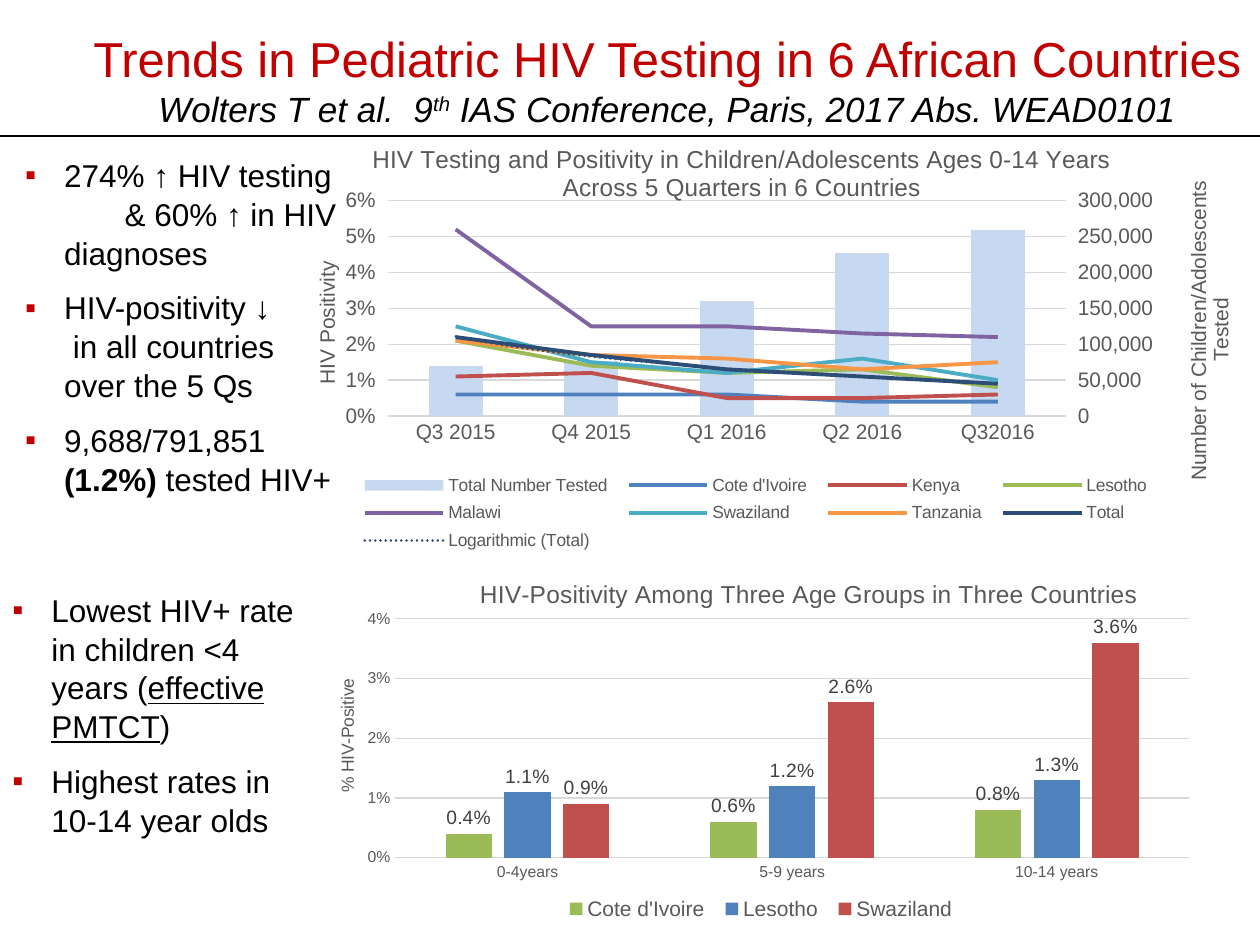
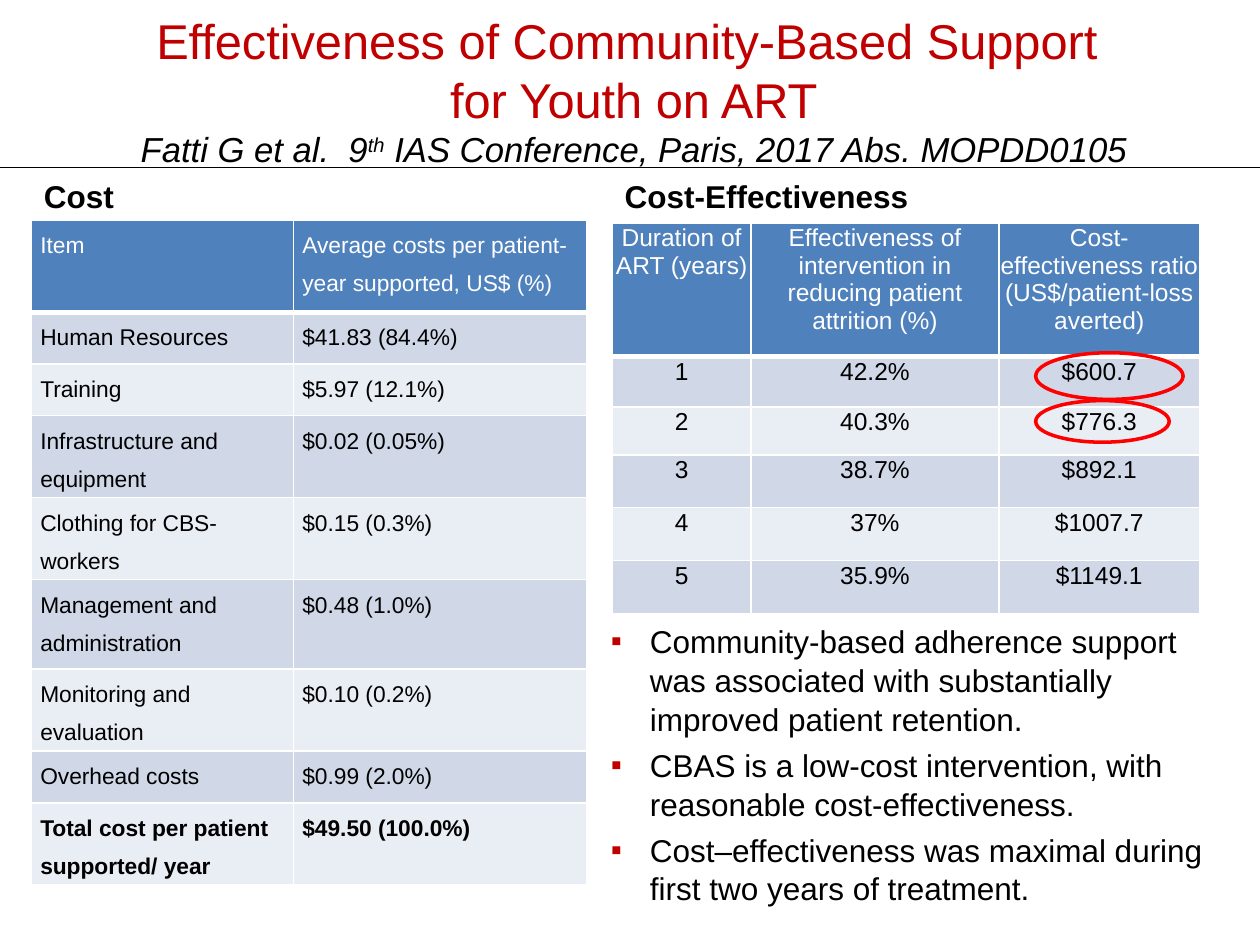
from copy import deepcopy
from dataclasses import dataclass

from pptx import Presentation
from pptx import util as u
from pptx.chart import axis as axes
from pptx.chart.data import CategoryChartData
from pptx.dml.color import RGBColor
from pptx.enum import chart as ch, shapes, text
from pptx.oxml import parse_xml
from pptx.oxml.ns import nsdecls, qn

CRIMSON = RGBColor(0xC0, 0x00, 0x00)
BLACK = RGBColor(0x00, 0x00, 0x00)
WHITE = RGBColor(0xFF, 0xFF, 0xFF)
RED = RGBColor(0xFF, 0x00, 0x00)
GREY = RGBColor(0x59, 0x59, 0x59)
DARK_GREY = RGBColor(0x40, 0x40, 0x40)
GRID = RGBColor(0xD9, 0xD9, 0xD9)
PALE_BLUE = RGBColor(0xC6, 0xD9, 0xF1)
BLUE = RGBColor(0x4F, 0x81, 0xBD)
BRICK = RGBColor(0xC0, 0x50, 0x4D)
GREEN = RGBColor(0x9B, 0xBB, 0x59)
PURPLE = RGBColor(0x80, 0x64, 0xA2)
TEAL = RGBColor(0x4B, 0xAC, 0xC6)
ORANGE = RGBColor(0xF7, 0x96, 0x46)
NAVY = RGBColor(0x2C, 0x4D, 0x75)
BANDS = (RGBColor(0xE9, 0xED, 0xF4), RGBColor(0xD0, 0xD8, 0xE8))

FONT = "Arial"
CELL = u.Inches(0.1)
COLUMNS, ROWS = 100, 75
HANG = 0.31


@dataclass
class Box:
    """An area in grid cells."""
    left: float
    top: float
    width: float
    height: float

    def emu(self):
        """Return the area in slide units."""
        return [int(n * CELL) for n in (self.left, self.top, self.width, self.height)]

    def inner(self, left, top, width, height):
        """Return an area placed from this one's corner."""
        return Box(self.left + left, self.top + top, width, height)


def style(font, size, color=BLACK, **values):
    """Format a font."""
    for key, value in {"name": FONT, "size": u.Pt(size), "bold": False, **values}.items():
        setattr(font, key, value)
    font.color.rgb = color


def add_runs(paragraph, runs, size, color=BLACK):
    """Write (text, format) runs, turning newlines into line breaks."""
    for words, values in runs:
        values = {"size": size, "color": color, **values}
        raised = values.pop("raised", False)
        for number, line in enumerate(words.split("\n")):
            if number:
                paragraph.add_line_break()
            if line:
                run = paragraph.add_run()
                run.text = line
                style(run.font, **values)
                if raised:
                    run.font._element.set("baseline", "30000")


def heading(slide, box, title, authors, abstract, rule_row, sizes=(28, 20)):
    """Fill the title with its citation and draw the rule below."""
    holder = slide.shapes.title
    holder.left, holder.top, holder.width, holder.height = box.emu()
    frame = holder.text_frame
    frame.auto_size = text.MSO_AUTO_SIZE.NONE
    frame.vertical_anchor = text.MSO_ANCHOR.MIDDLE
    paragraph = frame.paragraphs[0]
    paragraph.alignment = text.PP_ALIGN.CENTER
    cite = {"size": sizes[1], "color": BLACK, "italic": True}
    add_runs(paragraph, [(title + "\n", {}), (authors + "  9", cite), ("th", {**cite, "raised": True}),
                         (" IAS Conference, Paris, 2017 Abs. " + abstract, cite)], sizes[0], CRIMSON)
    y = int(rule_row * CELL)
    rule = slide.shapes.add_connector(shapes.MSO_CONNECTOR.STRAIGHT, 0, y, COLUMNS * CELL, y)
    rule.line.color.rgb = BLACK
    rule.line.width = u.Pt(0.75)
    rule._element.spPr.append(parse_xml(f"<a:effectLst {nsdecls('a')}/>"))


def bullets(slide, box, points, before, after=0):
    """Write points, each a list of (indent, runs) lines with a bullet on the first."""
    frame = slide.shapes.add_textbox(*box.emu()).text_frame
    frame.word_wrap = True
    frame.auto_size = text.MSO_AUTO_SIZE.SHAPE_TO_FIT_TEXT
    lines = [(n == 0, n == len(point) - 1, *line) for point in points for n, line in enumerate(point)]
    for number, (first, last, indent, runs) in enumerate(lines):
        paragraph = frame.add_paragraph() if number else frame.paragraphs[0]
        paragraph.line_spacing = 1.03
        paragraph.space_before = u.Pt(before if first else 0)
        paragraph.space_after = u.Pt(after if last else 0)
        properties = paragraph._p.get_or_add_pPr()
        properties.set("marL", str(u.Inches(indent)))
        properties.set("indent", str(-u.Inches(HANG) if first else 0))
        if first:
            for mark in (f'<a:buClr {nsdecls("a")}><a:srgbClr val="{CRIMSON}"/></a:buClr>',
                         f'<a:buFont {nsdecls("a")} typeface="{FONT}"/>',
                         f'<a:buChar {nsdecls("a")} char="▪"/>'):
                properties.append(parse_xml(mark))
        add_runs(paragraph, runs, 18)


def set_layout(parent, index, target="", **shares):
    """Fix the place of a chart part in shares of the chart."""
    old = parent.find(qn("c:layout"))
    if old is not None:
        parent.remove(old)
    modes = '<c:xMode val="edge"/><c:yMode val="edge"/>'
    values = "".join(f'<c:{key} val="{value}"/>' for key, value in shares.items())
    parent.insert(index, parse_xml(f"<c:layout {nsdecls('c')}><c:manualLayout>{target}{modes}{values}"
                                   "</c:manualLayout></c:layout>"))


def chart_title(title, words, size, x, y, upright=True):
    """Write and place a chart or axis title."""
    frame = title.text_frame
    frame.text = words
    for paragraph in frame.paragraphs:
        for run in paragraph.runs:
            style(run.font, size, GREY)
    if not upright:
        body = next(title._element.iter(qn("a:bodyPr")))
        body.set("rot", "-5400000")
        body.set("vert", "horz")
    set_layout(title._element, 1, x=x, y=y)


def value_axis(axis, top, step, number_format, size, title):
    """Format a value axis with its gridlines and title."""
    for key, value in {"minimum_scale": 0, "maximum_scale": top, "major_unit": step,
                       "has_major_gridlines": True,
                       "major_tick_mark": ch.XL_TICK_MARK.NONE}.items():
        setattr(axis, key, value)
    axis.tick_labels.number_format = number_format
    axis.tick_labels.number_format_is_linked = False
    style(axis.tick_labels.font, size, GREY)
    axis.format.line.fill.background()
    thin_grey(axis.major_gridlines.format.line)
    chart_title(axis.axis_title, *title, upright=False)


def thin_grey(line):
    """Draw a line as a thin grey rule."""
    line.color.rgb = GRID
    line.width = u.Pt(0.75)


def add_column_chart(slide, box, kind, categories, series, title, plot, key, gap, overlap, sizes):
    """Add a column chart with title, legend and category axis."""
    data = CategoryChartData()
    data.categories = categories
    for name, _, values in series:
        data.add_series(name, values, "#,##0" if max(values) > 1 else "0.0%")
    chart = slide.shapes.add_chart(kind, *box.emu(), data).chart
    label_size, legend_size = sizes
    style(chart.font, label_size)
    chart_title(chart.chart_title, *title)
    chart.has_legend = True
    chart.legend.position = ch.XL_LEGEND_POSITION.BOTTOM
    chart.legend.include_in_layout = False
    style(chart.legend.font, legend_size, GREY)
    set_layout(chart.legend._element, 1, **dict(zip("xywh", key)))
    columns = chart.plots[0]
    columns.gap_width, columns.overlap, columns.vary_by_categories = gap, overlap, False
    for column, (_, color, _) in zip(columns.series, series):
        column.format.fill.solid()
        column.format.fill.fore_color.rgb = color
    axis = chart.category_axis
    axis.major_tick_mark = ch.XL_TICK_MARK.NONE
    style(axis.tick_labels.font, label_size, GREY)
    thin_grey(axis.format.line)
    set_layout(chart._chartSpace.chart.plotArea, 0, '<c:layoutTarget val="inner"/>', **dict(zip("xywh", plot)))
    return chart


def lines_on_second_axis(chart, colors):
    """Move all series but the first to lines; return the column and line value axes."""
    area = chart._chartSpace.chart.plotArea
    bars = area.find(qn("c:barChart"))
    lines = parse_xml(f'<c:lineChart {nsdecls("c")}><c:grouping val="standard"/><c:varyColors val="0"/>'
                      '<c:marker val="1"/><c:axId val="501"/><c:axId val="502"/></c:lineChart>')
    for member in bars.findall(qn("c:ser"))[1:]:
        for tag in ("c:invertIfNegative", "c:spPr"):
            for part in member.findall(qn(tag)):
                member.remove(part)
        lines.find(qn("c:marker")).addprevious(member)
    bars.addnext(lines)
    counts = area.find(qn("c:valAx"))
    category, shares = deepcopy(area.find(qn("c:catAx"))), deepcopy(counts)
    for element, own, other in ((category, "501", "502"), (shares, "502", "501")):
        element.find(qn("c:axId")).set("val", own)
        element.find(qn("c:crossAx")).set("val", other)
    counts.addnext(shares)
    shares.addnext(category)
    counts.find(qn("c:axPos")).set("val", "r")
    chart.category_axis.crosses = ch.XL_AXIS_CROSSES.MAXIMUM
    hidden = axes.CategoryAxis(category)
    hidden.visible = False
    hidden.crosses = ch.XL_AXIS_CROSSES.MINIMUM
    for line, color in zip(chart.plots[1].series, colors):
        line.smooth = False
        line.marker.style = ch.XL_MARKER_STYLE.NONE
        line.format.line.color.rgb = color
        line.format.line.width = u.Pt(2.25)
    return axes.ValueAxis(counts), axes.ValueAxis(shares)


def add_log_trend(series, color):
    """Add a dotted logarithmic trend line."""
    series._element.find(qn("c:cat")).addprevious(parse_xml(
        f'<c:trendline {nsdecls("c", "a")}><c:spPr><a:ln w="{u.Pt(1.5)}" cap="rnd"><a:solidFill>'
        f'<a:srgbClr val="{color}"/></a:solidFill><a:prstDash val="sysDot"/></a:ln></c:spPr>'
        '<c:trendlineType val="log"/><c:dispRSqr val="0"/><c:dispEq val="0"/></c:trendline>'))


def testing_chart(slide, box):
    """Show tests as columns and positivity as lines."""
    series = [("Total Number Tested", PALE_BLUE, (69000, 77000, 160000, 227000, 259000)),
              ("Cote d'Ivoire", BLUE, (0.006, 0.006, 0.006, 0.004, 0.004)),
              ("Kenya", BRICK, (0.011, 0.012, 0.005, 0.005, 0.006)),
              ("Lesotho", GREEN, (0.021, 0.014, 0.012, 0.013, 0.008)),
              ("Malawi", PURPLE, (0.052, 0.025, 0.025, 0.023, 0.022)),
              ("Swaziland", TEAL, (0.025, 0.015, 0.012, 0.016, 0.01)),
              ("Tanzania", ORANGE, (0.021, 0.017, 0.016, 0.013, 0.015)),
              ("Total", NAVY, (0.022, 0.017, 0.013, 0.011, 0.009))]
    title = ("HIV Testing and Positivity in Children/Adolescents Ages 0-14 Years\n"
             "Across 5 Quarters in 6 Countries", 14, 0.11, 0.01)
    chart = add_column_chart(slide, box, ch.XL_CHART_TYPE.COLUMN_STACKED,
                             ("Q3 2015", "Q4 2015", "Q1 2016", "Q2 2016", "Q32016"), series, title,
                             (0.13, 0.15, 0.7, 0.5), (0.09, 0.77, 0.84, 0.21), 150, 100, (12, 10))
    tested, positivity = lines_on_second_axis(chart, [color for _, color, _ in series[1:]])
    value_axis(positivity, 0.06, 0.01, "0%", 12, ("HIV Positivity", 12, 0.05, 0.28))
    positivity.tick_label_position = ch.XL_TICK_LABEL_POSITION.LOW
    value_axis(tested, 300000, 50000, "#,##0", 12,
               ("Number of Children/Adolescents Tested", 12, 0.95, 0.09))
    tested.tick_label_position = ch.XL_TICK_LABEL_POSITION.HIGH
    add_log_trend(chart.plots[1].series[-1], NAVY)


def age_chart(slide, box):
    """Compare positivity by age group."""
    series = [("Cote d'Ivoire", GREEN, (0.004, 0.006, 0.008)),
              ("Lesotho", BLUE, (0.011, 0.012, 0.013)),
              ("Swaziland", BRICK, (0.009, 0.026, 0.036))]
    title = ("HIV-Positivity Among Three Age Groups in Three Countries", 14, 0.18, 0.02)
    chart = add_column_chart(slide, box, ch.XL_CHART_TYPE.COLUMN_CLUSTERED,
                             ("0-4years", "5-9 years", "10-14 years"), series, title,
                             (0.09, 0.14, 0.89, 0.63), (0.27, 0.86, 0.46, 0.09), 219, -27, (9, 12))
    value_axis(chart.value_axis, 0.04, 0.01, "0%", 9, ("% HIV-Positive", 10, 0.02, 0.29))
    for column in chart.plots[0].series:
        labels = column.data_labels
        for key, value in {"show_value": True, "number_format": "0.0%", "number_format_is_linked": False,
                           "position": ch.XL_LABEL_POSITION.OUTSIDE_END}.items():
            setattr(labels, key, value)
        style(labels.font, 11, DARK_GREY)


def add_border(cell, side, points):
    """Draw one white cell border."""
    cell._tc.get_or_add_tcPr().append(parse_xml(
        f'<a:ln{side} {nsdecls("a")} w="{u.Pt(points)}"><a:solidFill><a:srgbClr val="{WHITE}"/>'
        f'</a:solidFill></a:ln{side}>'))


def banded_table(slide, box, caption, widths, heights, rows, size, align, spacing, insets, bold_last=False):
    """Add a captioned table with a blue header and banded rows."""
    words, caption_width = caption
    frame = slide.shapes.add_textbox(*Box(box.left, 13.6, caption_width, 4).emu()).text_frame
    frame.word_wrap = False
    frame.auto_size = text.MSO_AUTO_SIZE.SHAPE_TO_FIT_TEXT
    add_runs(frame.paragraphs[0], [(words, {"bold": True})], 18)
    table = slide.shapes.add_table(len(rows), len(widths), *box.emu()).table
    for column, width in zip(table.columns, widths):
        column.width = int(width * CELL)
    for r, (row, height) in enumerate(zip(rows, heights)):
        table.rows[r].height = int(height * CELL)
        for c, words in enumerate(row):
            cell = table.cell(r, c)
            for side, inset in zip(("left", "top", "right", "bottom"), insets):
                setattr(cell, "margin_" + side, u.Inches(inset))
            for side in "LRTB":
                add_border(cell, side, 3 if (r, side) in ((0, "B"), (1, "T")) else 1)
            cell.fill.solid()
            cell.fill.fore_color.rgb = BANDS[r % 2] if r else BLUE
            paragraph = cell.text_frame.paragraphs[0]
            paragraph.alignment, paragraph.line_spacing = align, spacing
            bold = bold_last and r == len(rows) - 1
            add_runs(paragraph, [(words, {"bold": bold})], size, BLACK if r else WHITE)


def cost_table(slide, box):
    """List the costs per patient-year."""
    rows = [("Item", "Average costs per patient-year supported, US$ (%)"),
            ("Human Resources", "$41.83 (84.4%)"), ("Training", "$5.97 (12.1%)"),
            ("Infrastructure and equipment", "$0.02 (0.05%)"), ("Clothing for CBS-workers", "$0.15 (0.3%)"),
            ("Management and administration", "$0.48 (1.0%)"), ("Monitoring and evaluation", "$0.10 (0.2%)"),
            ("Overhead costs", "$0.99 (2.0%)"), ("Total cost per patient supported/ year", "$49.50 (100.0%)")]
    banded_table(slide, box, ("Cost", 7.6), (20.8, 23.3), (7.3, 4.1, 4.1, 5.6, 5.4, 7.1, 6, 4.1, 6.4), rows,
                 13, text.PP_ALIGN.LEFT, 1.5, (0.07, 0, 0.07, 0), bold_last=True)


def effectiveness_table(slide, box):
    """List cost-effectiveness by duration and ring the best two ratios."""
    rows = [("Duration of ART (years)", "Effectiveness of intervention in reducing patient attrition (%)",
             "Cost-effectiveness ratio (US$/patient-loss averted)"),
            ("1", "42.2%", "$600.7"), ("2", "40.3%", "$776.3"), ("3", "38.7%", "$892.1"),
            ("4", "37%", "$1007.7"), ("5", "35.9%", "$1149.1")]
    banded_table(slide, box, ("Cost-Effectiveness", 24.8), (11, 19.7, 15.9), (10.6, 4, 3.8, 4.2, 4.2, 4.2),
                 rows, 14, text.PP_ALIGN.CENTER, 1.0, (0.01, 0.01, 0.01, 0))
    for top, width, height in ((10.3, 11.7, 3.7), (14.1, 10.6, 3.3)):
        ring = slide.shapes.add_shape(shapes.MSO_SHAPE.OVAL, *box.inner(33.6, top, width, height).emu())
        ring.shadow.inherit = False
        ring.fill.background()
        ring.line.color.rgb = RED
        ring.line.width = u.Pt(2)


def testing_slide(slide):
    """Build the testing trends slide."""
    heading(slide, Box(4.2, 0, 97.5, 12.5), "Trends in Pediatric HIV Testing in 6 African Countries",
            "Wolters T et al.", "WEAD0101", 10.8)
    testing_chart(slide, Box(20.8, 10.8, 77.5, 34.2))
    age_chart(slide, Box(25, 44.9, 70.8, 30.1))
    bullets(slide, Box(1, 11.8, 27.1, 28.5), [
        [(HANG, [("274% ↑ HIV testing", {})]), (0.79, [("& 60% ↑ in HIV", {})]), (HANG, [("diagnoses", {})])],
        [(HANG, [("HIV-positivity ↓\n in all countries\nover the 5 Qs", {})])],
        [(HANG, [("9,688/791,851 ", {}), ("(1.2%) ", {"bold": True}), ("tested HIV+", {})])]], 6, 3)
    bullets(slide, Box(0, 46.3, 25.7, 21), [
        [(HANG, [("Lowest HIV+ rate in children <4 years (", {}),
                 ("effective PMTCT", {"underline": True}), (")", {})])],
        [(HANG, [("Highest rates in 10-14 year olds", {})])]], 6, 3)


def support_slide(slide):
    """Build the community-based support slide."""
    heading(slide, Box(5.3, 0.9, 90, 12.5), "Effectiveness of Community-Based Support \nfor Youth on ART",
            "Fatti G et al.", "MOPDD0105", 13.3, (27.9, 19.8))
    cost_table(slide, Box(2.5, 17.5, 44.2, 52.7))
    effectiveness_table(slide, Box(48.6, 17.7, 46.7, 30.9))
    findings = ("Community-based adherence support was associated with substantially improved patient retention.",
                "CBAS is a low-cost intervention, with reasonable cost-effectiveness.",
                "Cost–effectiveness was maximal during first two years of treatment.")
    bullets(slide, Box(47.5, 48.8, 50.3, 23.8), [[(HANG, [(finding, {})])] for finding in findings], 4)


def main():
    """Build and save the deck."""
    deck = Presentation()
    deck.slide_width, deck.slide_height = COLUMNS * CELL, ROWS * CELL
    title_only = deck.slide_layouts[5]
    for build in (testing_slide, support_slide):
        build(deck.slides.add_slide(title_only))
    deck.save("out.pptx")


if __name__ == "__main__":
    main()
